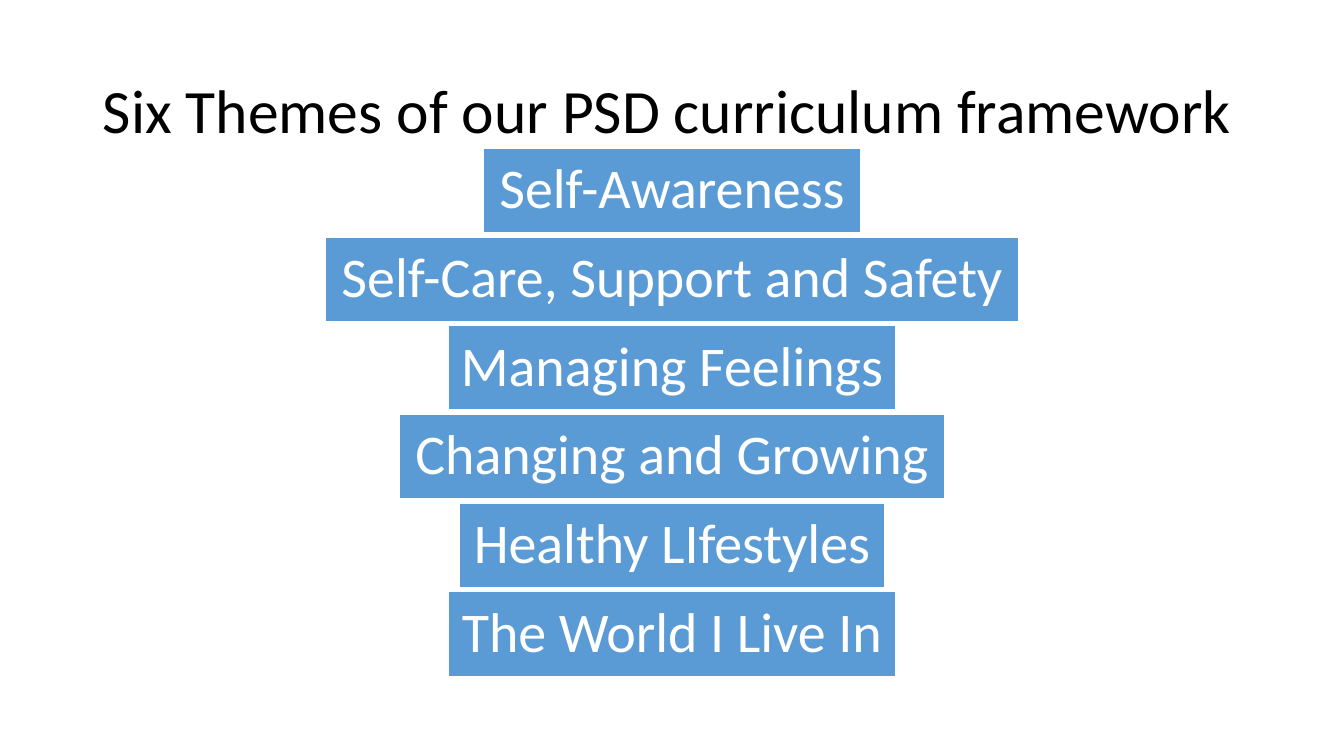
"""Build a slide listing the six themes of a curriculum framework."""
from dataclasses import dataclass

import pptx
import pptx.dml.color
import pptx.enum.shapes
import pptx.enum.text
import pptx.util


@dataclass(frozen=True)
class Theme:
    font: str = "Calibri"
    title_size: int = 44
    band_size: int = 40
    ink: str = "000000"
    paper: str = "FFFFFF"
    band: str = "5B9BD5"


THEME = Theme()
WIDTH, HEIGHT = 13.33, 7.5
BAND_TOP, BAND_HEIGHT, BAND_PITCH = 1.47, 0.84, 0.88
BAND_INSET = 0.11
BANDS = [
    ("Self-Awareness", 3.74),
    ("Self-Care, Support and Safety", 6.88),
    ("Managing Feelings", 4.43),
    ("Changing and Growing", 5.41),
    ("Healthy LIfestyles", 4.22),
    ("The World I Live In", 4.43),
]


def rgb(value):
    return pptx.dml.color.RGBColor.from_string(value)


def write(tf, text, size, color, align):
    tf.text = text
    tf.word_wrap = True
    tf.auto_size = pptx.enum.text.MSO_AUTO_SIZE.NONE
    tf.vertical_anchor = pptx.enum.text.MSO_ANCHOR.MIDDLE
    p = tf.paragraphs[0]
    p.alignment = align
    p.line_spacing = 0.9
    p.font.name = THEME.font
    p.font.size = pptx.util.Pt(size)
    p.font.color.rgb = rgb(color)


def add_title(s, text):
    sp = s.shapes.title
    sp.left, sp.top = pptx.util.Inches(0.92), pptx.util.Inches(0.4)
    sp.width, sp.height = pptx.util.Inches(11.5), pptx.util.Inches(1.45)
    write(sp.text_frame, text, THEME.title_size, THEME.ink,
          pptx.enum.text.PP_ALIGN.LEFT)


def add_band(s, row, text, width):
    sp = s.shapes.add_shape(
        pptx.enum.shapes.MSO_SHAPE.RECTANGLE,
        pptx.util.Inches((WIDTH - width) / 2),
        pptx.util.Inches(BAND_TOP + row * BAND_PITCH),
        pptx.util.Inches(width),
        pptx.util.Inches(BAND_HEIGHT),
    )
    sp.shadow.inherit = False
    sp.fill.solid()
    sp.fill.fore_color.rgb = rgb(THEME.band)
    sp.line.color.rgb = rgb(THEME.paper)
    sp.line.width = pptx.util.Pt(1)
    tf = sp.text_frame
    tf.margin_left = tf.margin_right = pptx.util.Inches(BAND_INSET)
    tf.margin_top = tf.margin_bottom = pptx.util.Inches(BAND_INSET)
    write(tf, text, THEME.band_size, THEME.paper,
          pptx.enum.text.PP_ALIGN.CENTER)


def main():
    prs = pptx.Presentation()
    prs.slide_width = pptx.util.Inches(WIDTH)
    prs.slide_height = pptx.util.Inches(HEIGHT)
    s = prs.slides.add_slide(prs.slide_layouts.get_by_name("Title Only"))
    add_title(s, "Six Themes of our PSD curriculum framework")
    for row, (text, width) in enumerate(BANDS):
        add_band(s, row, text, width)
    prs.save("out.pptx")


if __name__ == "__main__":
    main()
